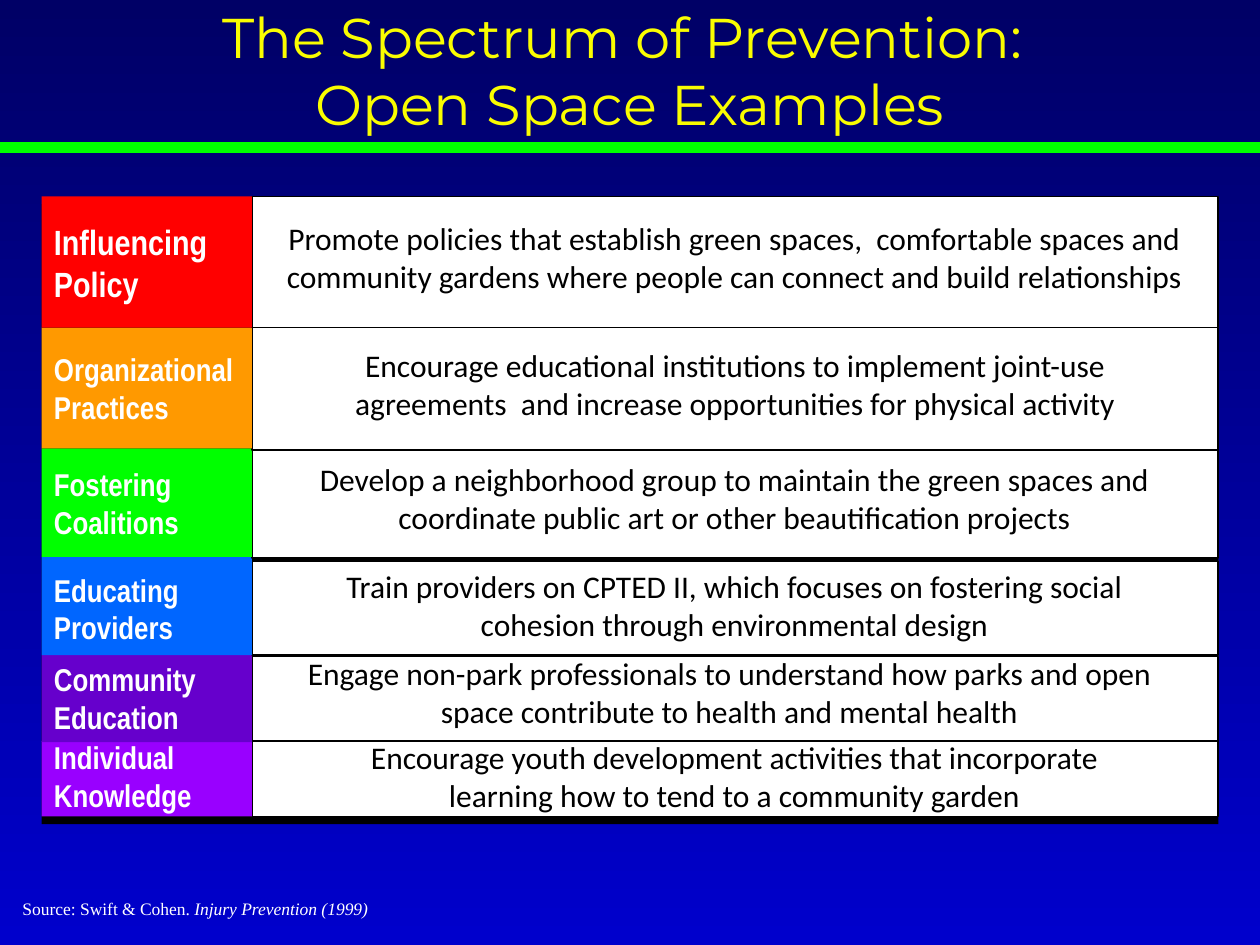
from lxml.etree import SubElement
from pptx import Presentation
from pptx.dml.color import RGBColor
from pptx.enum.shapes import MSO_CONNECTOR, MSO_SHAPE
from pptx.enum.text import MSO_ANCHOR, MSO_AUTO_SIZE, PP_ALIGN
from pptx.oxml.ns import qn
from pptx.util import Inches, Pt

LEFT, SPLIT, RIGHT = 0.33, 2, 9.67  # column edges
TOP, BOTTOM = 1.56, 6.54
LINE_H = 0.71  # height of a two-line text box

# label, colour, band top and height, panel top and height, label box, text box, text
# (boxes are left, top, width)
LEVELS = [
    ("Influencing Policy", "FF0000", 1.56, 1.04, 1.56, 1.04,
     (LEFT, 1.7, 1.67), (2.08, 1.69, 7.5),
     "Promote policies that establish green spaces,  comfortable spaces and "
     "community gardens where people can connect and build relationships"),
    ("Organizational Practices", "FF9900", 2.6, 0.96, 2.53, 1.04,
     (LEFT, 2.73, 2.25), (2.26, 2.7, 7.15),
     "Encourage educational institutions to implement joint-use "
     "agreements  and increase opportunities for physical activity"),
    ("Fostering Coalitions", "00FF00", 3.56, 0.86, 3.54, 0.89,
     (LEFT, 3.64, 1.67), (2.08, 3.6, 7.5),
     "Develop a neighborhood group to maintain the green spaces and "
     "coordinate public art or other beautification projects"),
    ("Educating Providers", "0066FF", 4.42, 0.78, 4.45, 0.75,
     (LEFT, 4.48, 1.67), (2.58, 4.45, 6.5),
     "Train providers on CPTED II, which focuses on fostering social "
     "cohesion through environmental design"),
    ("Community Education", "6600CC", 5.2, 0.69, 5.21, 0.67,
     (LEFT, 5.19, 1.67), (2.08, 5.14, 7.42),
     "Engage non-park professionals to understand how parks and open "
     "space contribute to health and mental health"),
    ("Individual Knowledge", "9900FF", 5.88, 0.6, 5.88, 0.6,
     (LEFT, 5.81, 1.67), (2.83, 5.81, 6),
     "Encourage youth development activities that incorporate "
     "learning how to tend to a community garden"),
]


def add_rect(x, y, w, h, fill, line_width=0):
    sp = slide.shapes.add_shape(MSO_SHAPE.RECTANGLE, Inches(x), Inches(y), Inches(w), Inches(h))
    sp.shadow.inherit = False
    sp.fill.solid()
    sp.fill.fore_color.rgb = RGBColor.from_string(fill)
    if line_width:
        sp.line.color.rgb = RGBColor.from_string("000000")
        sp.line.width = Pt(line_width)
    else:
        sp.line.fill.background()


def add_text(box, h, text, size, font, color, align=PP_ALIGN.LEFT, bold=False):
    x, y, w = box
    sp = slide.shapes.add_textbox(Inches(x), Inches(y), Inches(w), Inches(h))
    tf = sp.text_frame
    tf.word_wrap = True
    tf.auto_size = MSO_AUTO_SIZE.SHAPE_TO_FIT_TEXT
    p = tf.paragraphs[0]
    p.text = text
    p.alignment = align
    p.font.size, p.font.name, p.font.bold = Pt(size), font, bold
    p.font.color.rgb = RGBColor.from_string(color)
    return p


prs = Presentation()
prs.slide_width, prs.slide_height = Inches(10), Inches(7.5)
slide = prs.slides.add_slide(prs.slide_layouts[5])

# Background gradient, dark at the top
bg = slide.background.fill
bg.gradient()
bg.gradient_angle = 270
for stop, position, color in zip(bg.gradient_stops, (0, 1), ("000066", "0000CC")):
    stop.position = position
    stop.color.rgb = RGBColor.from_string(color)

# Title
title = slide.shapes.title
title.left, title.top, title.width, title.height = 0, Inches(0.28), prs.slide_width, Inches(0.55)
tf = title.text_frame
tf.word_wrap = True
tf.auto_size = MSO_AUTO_SIZE.NONE
tf.vertical_anchor = MSO_ANCHOR.MIDDLE
tf.text = "The Spectrum of Prevention: \vOpen Space Examples"
p = tf.paragraphs[0]
p.alignment = PP_ALIGN.CENTER
p.font.size, p.font.name = Pt(32), "Montserrat"
p.font.color.rgb = RGBColor.from_string("FAFD00")

# Green rule under the title
rule = slide.shapes.add_connector(
    MSO_CONNECTOR.STRAIGHT, 0, Inches(1.17), prs.slide_width, Inches(1.17))
rule.line.color.rgb = RGBColor.from_string("00FF00")
rule.line.width = Pt(6)
SubElement(rule._element.spPr, qn("a:effectLst"))

# Black backing, then panels and bands from the bottom up
add_rect(LEFT, 1.62, RIGHT - LEFT, BOTTOM - 1.62, "000000")
for _, color, band_y, band_h, panel_y, panel_h, _, _, _ in reversed(LEVELS):
    add_rect(SPLIT, panel_y, RIGHT - SPLIT, panel_h, "FFFFFF", 1)
    add_rect(LEFT, band_y, SPLIT - LEFT, band_h, color)

# Labels and examples
for i, (label, _, _, _, _, _, label_box, text_box, text) in enumerate(LEVELS):
    add_text(label_box, LINE_H if i else 0.77, label, 18 if i else 20,
             "Arial Narrow", "FFFFFF", bold=True)
    add_text(text_box, LINE_H, text, 18, "Calibri", "000000", PP_ALIGN.CENTER)

# Source line
p = add_text((0.08, 7.08, 6.08), 0.44, "Source: Swift & Cohen.", 10, "Times New Roman", "FFFFFF")
r = p.add_run()
r.text = " Injury Prevention (1999)"
r.font.italic = True

prs.save("out.pptx")
